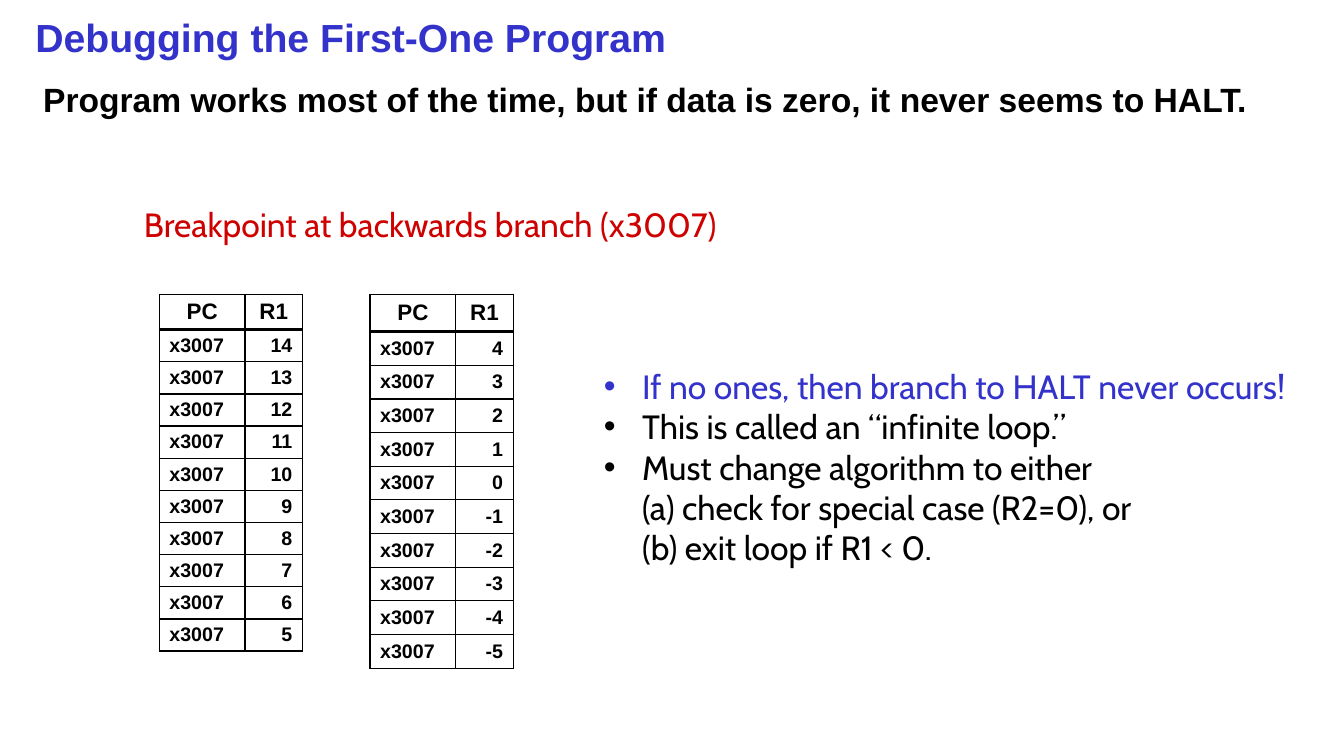
from dataclasses import dataclass

from lxml import etree
from pptx import Presentation
from pptx.dml.color import RGBColor
from pptx.enum.text import MSO_ANCHOR, PP_ALIGN
from pptx.oxml.ns import qn
from pptx.util import Inches, Pt

LEFT, CENTER, RIGHT = PP_ALIGN.LEFT, PP_ALIGN.CENTER, PP_ALIGN.RIGHT
TOP, MIDDLE = MSO_ANCHOR.TOP, MSO_ANCHOR.MIDDLE
TITLE_ONLY = 5


@dataclass(frozen=True)
class Theme:
    blue: str = "3333CC"
    red: str = "CE0000"
    black: str = "000000"
    white: str = "FFFFFF"
    head: str = "Arial"
    body: str = "Cabin"
    title: int = 28
    text: int = 24
    label: int = 16
    cell: int = 14
    thin: int = 1
    thick: int = 3


@dataclass(frozen=True)
class Box:
    left: float
    top: float
    width: float
    height: float

    def place(self) -> tuple:
        return tuple(map(Inches, (self.left, self.top, self.width, self.height)))


@dataclass(frozen=True)
class Trace:
    box: Box
    label: float  # height of the label row
    first: int  # R1 counts down from here


@dataclass(frozen=True)
class Line:
    text: str
    color: str


THEME = Theme()
COLS = (0.85, 0.57)
STEPS = 10
INDENT = 0.38
TRACES = (
    Trace(Box(1.58, 2.92, 1.42, 3.54), 0.35, 14),
    Trace(Box(3.67, 2.92, 1.42, 3.71), 0.37, 4),
)
POINTS = (
    Line("If no ones, then branch to HALT never occurs!", THEME.blue),
    Line("This is called an “infinite loop.”", THEME.black),
    Line("Must change algorithm to either\n"
         "(a) check for special case (R2=0), or\n"
         "(b) exit loop if R1 < 0.", THEME.black),
)


def write(para, text: str, size: int, color: str, font: str,
          bold: bool = False, align=LEFT) -> None:
    para.text = text
    para.alignment = align
    for run in para.runs:
        run.font.size = Pt(size)
        run.font.name = font
        run.font.bold = bold
        run.font.color.rgb = RGBColor.from_string(color)


def add_text(slide, box: Box):
    frame = slide.shapes.add_textbox(*box.place()).text_frame
    frame.word_wrap = True
    frame.vertical_anchor = TOP
    return frame


def add_bullet(para) -> None:
    props = para._p.get_or_add_pPr()
    props.set("marL", str(Inches(INDENT)))
    props.set("indent", str(-Inches(INDENT)))
    etree.SubElement(props, qn("a:buFont"), typeface="Arial")
    etree.SubElement(props, qn("a:buChar"), char="•")


def add_edge(cell, side: str, width: int) -> None:
    props = cell._tc.get_or_add_tcPr()
    line = etree.SubElement(props, qn("a:ln" + side), w=str(Pt(width)))
    fill = etree.SubElement(line, qn("a:solidFill"))
    etree.SubElement(fill, qn("a:srgbClr"), val=THEME.black)


def add_trace(slide, trace: Trace) -> None:
    rows = [("PC", "R1")]
    rows += [("x3007", str(trace.first - step)) for step in range(STEPS)]
    table = slide.shapes.add_table(len(rows), len(COLS), *trace.box.place()).table
    table.horz_banding = False
    table.first_row = False
    for col, width in zip(table.columns, COLS):
        col.width = Inches(width)
    step = (trace.box.height - trace.label) / STEPS
    for r, row in enumerate(rows):
        table.rows[r].height = Inches(step if r else trace.label)
        for c, text in enumerate(row):
            cell = table.cell(r, c)
            cell.vertical_anchor = MIDDLE
            cell.margin_top = cell.margin_bottom = Inches(0.03)
            align = (LEFT, RIGHT)[c] if r else CENTER
            size = THEME.cell if r else THEME.label
            write(cell.text_frame.paragraphs[0], text, size, THEME.black,
                  THEME.head, True, align)
            # The rule under the labels is thick
            for side in "LRTB":
                heavy = (r, side) in ((0, "B"), (1, "T"))
                add_edge(cell, side, THEME.thick if heavy else THEME.thin)
            cell.fill.solid()
            cell.fill.fore_color.rgb = RGBColor.from_string(THEME.white)


def main() -> None:
    deck = Presentation()
    deck.slide_width, deck.slide_height = Inches(13.33), Inches(7.5)
    slide = deck.slides.add_slide(deck.slide_layouts[TITLE_ONLY])

    # Title
    title = slide.shapes.title
    title.left, title.top, title.width, title.height = Box(
        0.25, 0.08, 12.67, 0.58).place()
    title.text_frame.vertical_anchor = MIDDLE
    write(title.text_frame.paragraphs[0], "Debugging the First-One Program",
          THEME.title, THEME.blue, THEME.head, True)

    # Problem and breakpoint
    frame = add_text(slide, Box(0.33, 0.73, 12.67, 1.33))
    write(frame.paragraphs[0],
          "Program works most of the time, but if data is zero, "
          "it never seems to HALT.",
          THEME.text, THEME.black, THEME.head, True)
    frame = add_text(slide, Box(1.33, 1.97, 6.24, 0.5))
    write(frame.paragraphs[0], "Breakpoint at backwards branch (x3007)",
          THEME.text, THEME.red, THEME.body)

    # Register traces
    for trace in TRACES:
        add_trace(slide, trace)

    # Findings
    frame = add_text(slide, Box(5.89, 3.58, 7.44, 2.12))
    for i, point in enumerate(POINTS):
        para = frame.add_paragraph() if i else frame.paragraphs[0]
        write(para, point.text, THEME.text, point.color, THEME.body)
        add_bullet(para)

    deck.save("out.pptx")


if __name__ == "__main__":
    main()
